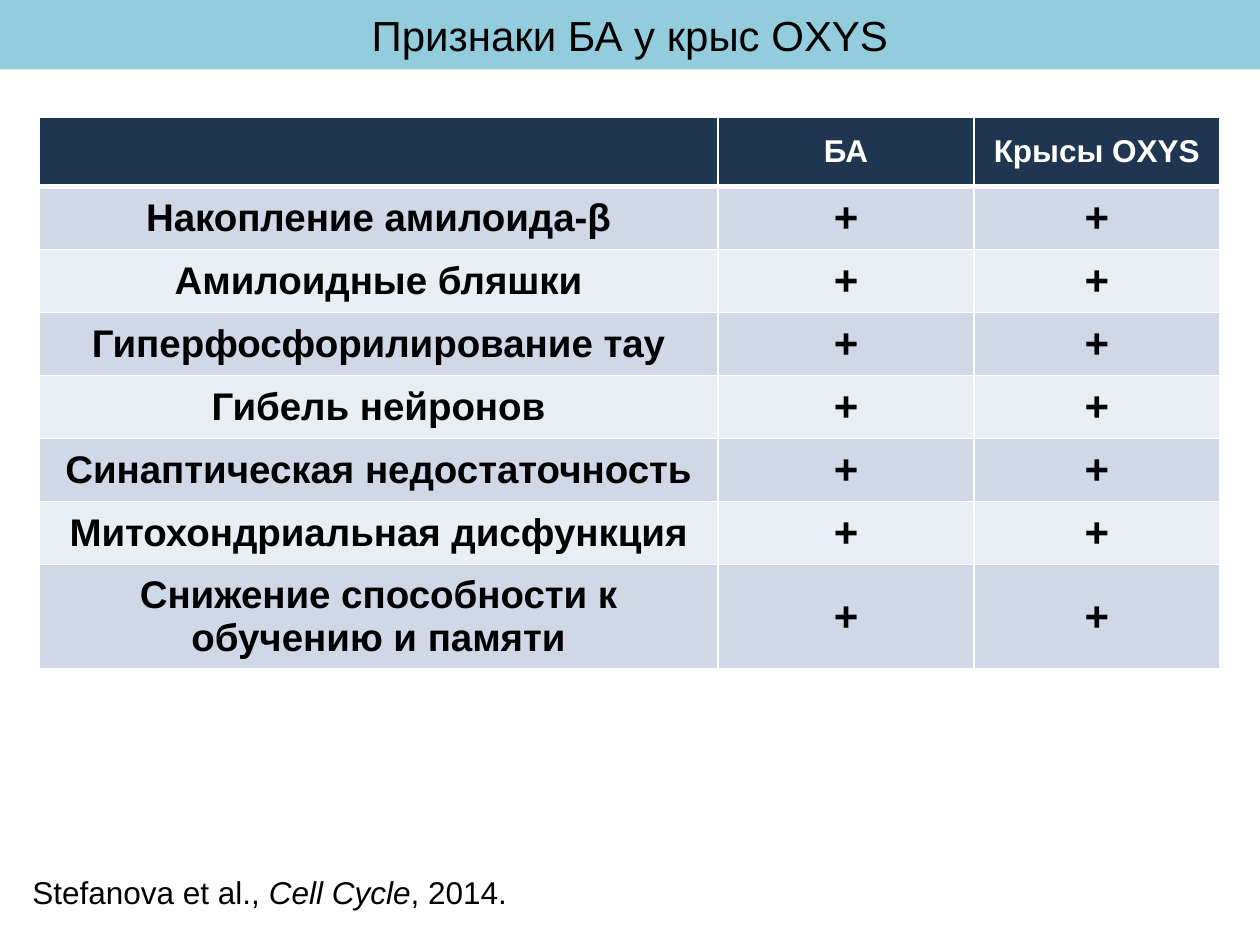
from lxml import etree
from pptx import Presentation
from pptx.dml.color import RGBColor
from pptx.enum.text import MSO_ANCHOR, PP_ALIGN
from pptx.oxml.ns import qn
from pptx.util import Inches, Pt

CENTER, LEFT = PP_ALIGN.CENTER, PP_ALIGN.LEFT
MIDDLE = MSO_ANCHOR.MIDDLE
TITLE_ONLY = 5
HEADER_FILL, BAND_FILLS = "1F3651", ("D0D8E8", "E9EDF4")


def color(value):
    return RGBColor.from_string(value)


def write(para, text, size=18, hue="000000", bold=False, italic=False, align=LEFT):
    para.alignment = align
    span = para.add_run()
    span.text = text
    font = span.font
    font.name, font.size, font.bold, font.italic = "Arial", Pt(size), bold, italic
    font.color.rgb = color(hue)


deck = Presentation()
deck.slide_width, deck.slide_height = Inches(10), Inches(7.5)
page = deck.slides.add_slide(deck.slide_layouts[TITLE_ONLY])

# Symptom table
signs = [
    "Накопление амилоида-β",
    "Амилоидные бляшки",
    "Гиперфосфорилирование тау",
    "Гибель нейронов",
    "Синаптическая недостаточность",
    "Митохондриальная дисфункция",
    "Снижение способности к обучению и памяти",
]
rows = [["", "БА", "Крысы OXYS"]] + [[sign, "+", "+"] for sign in signs]
widths = [5.39, 2.03, 1.95]
heights = [0.55] + [0.5] * 6 + [0.83]
table = page.shapes.add_table(
    len(rows), len(widths), Inches(0.31), Inches(0.93),
    Inches(sum(widths)), Inches(sum(heights))).table
for column, width in zip(table.columns, widths):
    column.width = Inches(width)
for row, height in zip(table.rows, heights):
    row.height = Inches(height)

for r, texts in enumerate(rows):
    for c, text in enumerate(texts):
        cell = table.cell(r, c)
        cell.vertical_anchor = MIDDLE
        # White borders, thicker under the header; they must precede the fill
        properties = cell._tc.get_or_add_tcPr()
        for side in "LRTB":
            thick = (r, side) in ((0, "B"), (1, "T"))
            line = etree.SubElement(properties, qn(f"a:ln{side}"), w=str(Pt(3 if thick else 1)))
            paint = etree.SubElement(line, qn("a:solidFill"))
            etree.SubElement(paint, qn("a:srgbClr"), val="FFFFFF")
        cell.fill.solid()
        cell.fill.fore_color.rgb = color(BAND_FILLS[(r - 1) % 2] if r else HEADER_FILL)
        if text:
            size = 18 if r == 0 else 22 if c == 0 else 24
            write(cell.text_frame.paragraphs[0], text, size=size, bold=True,
                  hue="000000" if r else "FFFFFF", align=CENTER)

# Title band
title = page.shapes.title
title.left, title.top = Inches(0), Inches(0)
title.width, title.height = Inches(10), Inches(0.55)
title.fill.solid()
title.fill.fore_color.rgb = color("93CDDD")
title.text_frame.vertical_anchor = MIDDLE
write(title.text_frame.paragraphs[0], "Признаки БА у крыс OXYS", size=24, align=CENTER)

# Citation
box = page.shapes.add_textbox(Inches(0.16), Inches(6.88), Inches(4.77), Inches(0.4))
box.text_frame.word_wrap = True
citation = box.text_frame.paragraphs[0]
write(citation, "Stefanova et al., ")
write(citation, "Cell Cycle", italic=True)
write(citation, ", 2014.")

deck.save("out.pptx")
